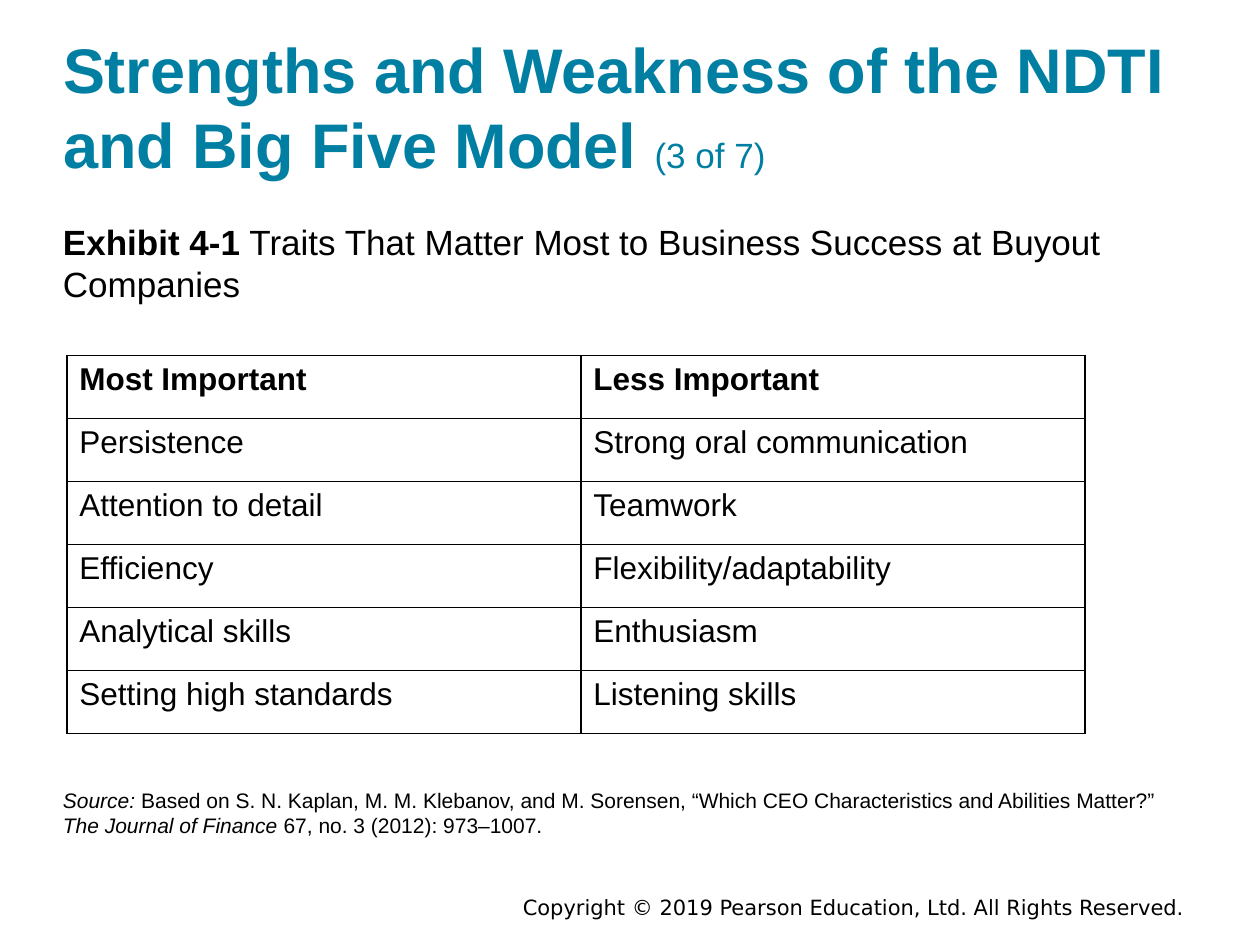
"""Build the slide on traits that matter most at buyout companies."""
from lxml import etree
from pptx import Presentation
from pptx.dml.color import RGBColor
from pptx.enum.text import MSO_ANCHOR, MSO_AUTO_SIZE, PP_ALIGN
from pptx.oxml.ns import qn
from pptx.util import Pt

TOP, MIDDLE, BOTTOM = MSO_ANCHOR.TOP, MSO_ANCHOR.MIDDLE, MSO_ANCHOR.BOTTOM
LEFT, RIGHT = PP_ALIGN.LEFT, PP_ALIGN.RIGHT
NO_FIT = MSO_AUTO_SIZE.NONE
TEAL = RGBColor(0x00, 0x7F, 0xA3)
BLACK = RGBColor(0x00, 0x00, 0x00)

TITLE = [("Strengths and Weakness of the NDTI and Big Five Model ", 36, "b"),
         ("(3 of 7)", 20, "")]
EXHIBIT = [("Exhibit 4-1", 20, "b"),
           (" Traits That Matter Most to Business Success at Buyout Companies", 20, "")]
SOURCE = [("Source: ", 12, "i"),
          ("Based on S. N. Kaplan, M. M. Klebanov, and M. Sorensen, “Which CEO "
           "Characteristics and Abilities Matter?” ", 12, ""),
          ("The Journal of Finance ", 12, "i"),
          ("67, no. 3 (2012): 973–1007.", 12, "")]
COPYRIGHT = [("Copyright © 2019 Pearson Education, Ltd. All Rights Reserved.", 12, "")]
TRAITS = [("Most Important", "Less Important"),
          ("Persistence", "Strong oral communication"),
          ("Attention to detail", "Teamwork"),
          ("Efficiency", "Flexibility/adaptability"),
          ("Analytical skills", "Enthusiasm"),
          ("Setting high standards", "Listening skills")]
COL_WIDTHS = (293.76, 288)
ROW_HEIGHT = 36


def style(r, size, marks="", color=BLACK, font="Arial"):
    r.font.name, r.font.size = font, Pt(size)
    r.font.bold, r.font.italic = "b" in marks, "i" in marks
    r.font.color.rgb = color


def fill_text(sp, box, runs, anchor=TOP, align=LEFT, color=BLACK,
              font="Arial", insets=(0, 0)):
    sp.left, sp.top, sp.width, sp.height = map(Pt, box)
    tf = sp.text_frame
    tf.word_wrap, tf.auto_size, tf.vertical_anchor = True, NO_FIT, anchor
    tf.margin_left = tf.margin_right = Pt(insets[0])
    tf.margin_top = tf.margin_bottom = Pt(insets[1])
    p = tf.paragraphs[0]
    p.alignment, p.line_spacing = align, 1.0
    for text, size, marks in runs:
        r = p.add_run()
        r.text = text
        style(r, size, marks, color, font)


def add_borders(cell):
    tc_pr = cell._tc.get_or_add_tcPr()
    for i, side in enumerate(("a:lnL", "a:lnR", "a:lnT", "a:lnB")):
        ln = etree.Element(qn(side), w=str(Pt(1)))
        fill = etree.SubElement(ln, qn("a:solidFill"))
        etree.SubElement(fill, qn("a:srgbClr"), val=str(BLACK))
        tc_pr.insert(i, ln)


def add_traits(s):
    shape = s.shapes.add_table(len(TRAITS), len(COL_WIDTHS), Pt(38.16), Pt(203.04),
                               Pt(sum(COL_WIDTHS)), Pt(ROW_HEIGHT * len(TRAITS)))
    table = shape.table
    table.horz_banding = False
    for column, width in zip(table.columns, COL_WIDTHS):
        column.width = Pt(width)
    for i, traits in enumerate(TRAITS):
        for j, trait in enumerate(traits):
            cell = table.cell(i, j)
            cell.text = trait
            style(cell.text_frame.paragraphs[0].runs[0], 18, "" if i else "b")
            cell.fill.background()
            add_borders(cell)


def main():
    prs = Presentation()
    prs.slide_width, prs.slide_height = Pt(720), Pt(540)
    s = prs.slides.add_slide(prs.slide_layouts[5])
    fill_text(s.shapes.title, (36, 17.28, 648, 86.4), TITLE, BOTTOM, color=TEAL)
    for box, runs in (((36, 126, 648, 59.76), EXHIBIT), ((36, 450, 648, 32.4), SOURCE)):
        fill_text(s.shapes.add_textbox(0, 0, 0, 0), box, runs)
    add_traits(s)
    fill_text(s.shapes.add_textbox(0, 0, 0, 0), (144, 507.6, 540, 21.6), COPYRIGHT,
              MIDDLE, RIGHT, font="DejaVu Sans", insets=(7.2, 3.6))
    prs.save("out.pptx")


if __name__ == "__main__":
    main()
